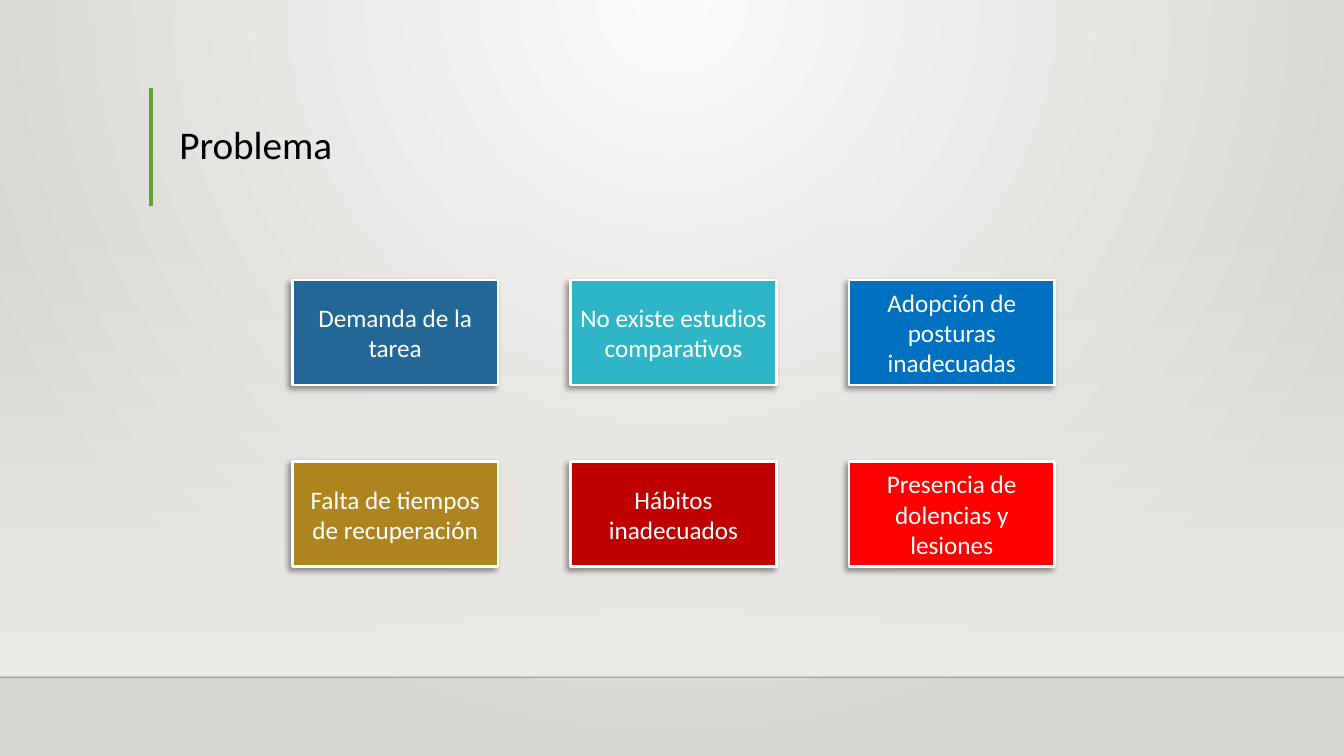
from lxml import etree
from pptx import Presentation
from pptx import util as u
from pptx.dml.color import RGBColor
from pptx.enum import shapes, text
from pptx.oxml import ns, parse_xml


def rgb(value):
    return RGBColor.from_string(value)


def add_xml(parent, tag, **attributes):
    return etree.SubElement(parent, ns.qn(tag), attributes)


def gradient(stops, direction):
    """Build a gradient fill from (position, colour, opacity) in percent."""
    stop_xml = "".join(
        f'<a:gs pos="{pos * 1000}"><a:srgbClr val="{color}">'
        f'<a:alpha val="{opacity * 1000}"/></a:srgbClr></a:gs>'
        for pos, color, opacity in stops)
    return parse_xml(f'<a:gradFill {ns.nsdecls("a")} rotWithShape="1">'
                     f'<a:gsLst>{stop_xml}</a:gsLst>{direction}</a:gradFill>')


def write(frame, words, size=18, color="FFFFFF", align=text.PP_ALIGN.CENTER,
          spacing=1.0, inset=0.07):
    frame.word_wrap = True
    frame.vertical_anchor = text.MSO_ANCHOR.MIDDLE
    frame.margin_left = frame.margin_right = u.Inches(inset)
    frame.margin_top = frame.margin_bottom = u.Inches(0.05)
    paragraph = frame.paragraphs[0]
    paragraph.alignment = align
    paragraph.line_spacing = spacing
    run = paragraph.add_run()
    run.text = words
    run.font.name = SlideBuilder.FONT
    run.font.size = u.Pt(size)
    run.font.color.rgb = rgb(color)


class SlideBuilder:
    FONT = "Calibri"

    def __init__(self, deck):
        self.slide = deck.slides.add_slide(deck.slide_layouts[6])

    def background(self, stops, direction):
        self.slide.background.fill.solid()
        solid = self.slide._element.find(".//" + ns.qn("a:solidFill"))
        solid.getparent().replace(solid, gradient(stops, direction))

    def rect(self, x, y, w, h, fill):
        shape = self.slide.shapes.add_shape(
            shapes.MSO_SHAPE.RECTANGLE,
            u.Inches(x), u.Inches(y), u.Inches(w), u.Inches(h))
        shape.shadow.inherit = False
        shape.fill.solid()
        shape.fill.fore_color.rgb = rgb(fill)
        shape.line.fill.background()
        return shape

    def fade(self, x, y, w, h, color):
        band = self.rect(x, y, w, h, color)
        solid = band._element.spPr.find(ns.qn("a:solidFill"))
        stops = [(0, color, 0), (100, color, 100)]
        band._element.spPr.replace(
            solid, gradient(stops, '<a:lin ang="5400000" scaled="0"/>'))

    def line(self, x1, y1, x2, y2, color, width, opacity=100):
        rule = self.slide.shapes.add_connector(
            shapes.MSO_CONNECTOR.STRAIGHT,
            u.Inches(x1), u.Inches(y1), u.Inches(x2), u.Inches(y2))
        rule.line.color.rgb = rgb(color)
        rule.line.width = u.Pt(width)
        add_xml(rule._element.spPr, "a:effectLst")
        if opacity < 100:
            tint = rule._element.spPr.find(".//" + ns.qn("a:srgbClr"))
            add_xml(tint, "a:alpha", val=str(opacity * 1000))

    def title(self, x, y, w, h, words):
        box = self.slide.shapes.add_textbox(
            u.Inches(x), u.Inches(y), u.Inches(w), u.Inches(h))
        write(box.text_frame, words, size=28, color="000000",
              align=text.PP_ALIGN.LEFT, spacing=0.9, inset=0.1)

    def card(self, x, y, w, h, words, fill):
        card = self.rect(x, y, w, h, fill)
        card.line.color.rgb = rgb("FFFFFF")
        card.line.width = u.Pt(1.75)
        effects = card._element.spPr.find(ns.qn("a:effectLst"))
        shadow = add_xml(effects, "a:outerShdw", blurRad=str(u.Pt(4)),
                         dist=str(u.Pt(3)), dir=str(135 * 60000),
                         rotWithShape="0")
        shade = add_xml(shadow, "a:srgbClr", val="000000")
        add_xml(shade, "a:alpha", val="40000")
        write(card.text_frame, words)


PROBLEMS = [
    ("Demanda de la tarea", "236797"),
    ("No existe estudios comparativos", "2FB6C6"),
    ("Adopción de posturas inadecuadas", "0070C0"),
    ("Falta de tiempos de recuperación", "AE841E"),
    ("Hábitos inadecuados", "C00000"),
    ("Presencia de dolencias y lesiones", "FF0000"),
]


def main():
    deck = Presentation()
    deck.slide_width, deck.slide_height = u.Inches(13.33), u.Inches(7.5)
    page = SlideBuilder(deck)

    # Backdrop: light from the top centre, with a floor line
    page.background(
        [(0, "FAFAF9", 100), (100, "D7D5D2", 100)],
        '<a:path path="circle">'
        '<a:fillToRect l="43000" t="0" r="43000" b="100000"/></a:path>')
    page.fade(0, 2.2, 13.33, 4.5, "EDEBE7")
    page.line(0, 6.72, 13.33, 6.72, "000001", 1, opacity=20)

    # Title with its accent bar
    page.line(1.5, 0.87, 1.5, 2.04, "5FA534", 3)
    page.title(1.68, 0.88, 10.41, 1.15, "Problema")

    # Problem cards in three columns
    for index, (problem, fill) in enumerate(PROBLEMS):
        row, column = divmod(index, 3)
        page.card(2.9 + 2.76 * column, 2.78 + 1.8 * row, 2.04, 1.04,
                  problem, fill)

    deck.save("out.pptx")


if __name__ == "__main__":
    main()
